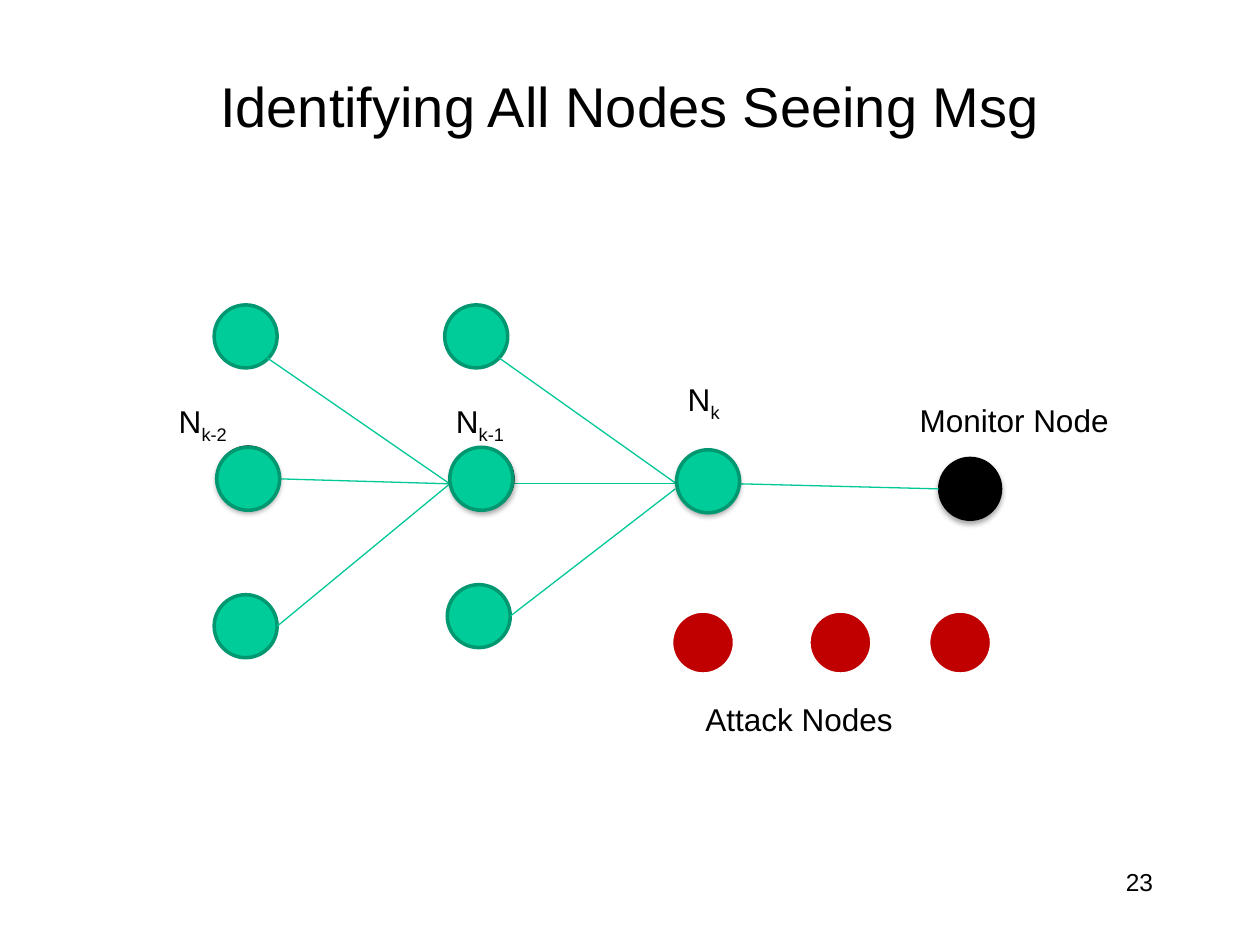
from dataclasses import dataclass

import pptx
import pptx.dml.color
import pptx.enum.shapes
import pptx.enum.text
import pptx.oxml
import pptx.oxml.ns
import pptx.util
from pptx.util import Inches

FONT = "Arial"
BLACK = "000000"
NODE_SIZE = 0.5
LINK_COLOR = "00C896"


@dataclass(frozen=True)
class NodeStyle:
    fill: str
    line: str
    width: float
    shadow: bool = False


@dataclass(frozen=True)
class Node:
    left: float
    top: float
    style: NodeStyle


@dataclass(frozen=True)
class Link:
    start: tuple[float, float]
    end: tuple[float, float]


@dataclass(frozen=True)
class Label:
    text: str
    left: float
    top: float
    width: float
    height: float = 0.4
    subscript: str = ""
    size: int = 18
    align: str = "LEFT"
    grow: bool = True


RELAY = NodeStyle("00CC99", "009771", 2)
ATTACK = NodeStyle("C00000", "FFFFFF", 2)
SHADED = NodeStyle(BLACK, BLACK, 0.75, shadow=True)

OUTER_NODES = [
    Node(1.7, 2.42, RELAY),
    Node(1.7, 4.72, RELAY),
    Node(3.53, 2.42, RELAY),
    Node(3.55, 4.64, RELAY),
    Node(7.45, 3.63, SHADED),
    *(Node(left, 4.85, ATTACK) for left in (5.33, 6.42, 7.37)),
]
HUB_BACKS = [
    Node(5.37, 3.57, SHADED),
    Node(3.58, 3.55, SHADED),
    Node(1.72, 3.54, SHADED),
]
HUBS = [
    Node(1.72, 3.55, RELAY),
    Node(3.57, 3.55, RELAY),
    Node(5.37, 3.57, RELAY),
]

PREVIOUS_HUB = (3.57, 3.84)
LAST_HUB = (5.37, 3.84)
LINKS = [
    *(Link(start, PREVIOUS_HUB) for start in ((2.12, 2.84), (2.2, 3.8), (2.2, 4.97))),
    *(Link(start, LAST_HUB) for start in ((3.96, 2.84), (4.07, 3.84))),
    Link((4.05, 4.89), (5.36, 3.88)),
    Link((5.87, 3.84), (7.45, 3.88)),
]

LABELS = [
    Label("Monitor Node", 7.2, 3.13, 1.75, 0.42),
    Label("N", 5.36, 2.97, 0.88, subscript="k"),
    Label("N", 1.32, 3.14, 0.88, subscript="k-2"),
    Label("N", 3.52, 3.14, 0.88, subscript="k-1"),
    Label("Attack Nodes", 5.5, 5.51, 2.1),
    Label("23", 7.17, 6.83, 2.08, 0.5, size=14, align="RIGHT", grow=False),
]


def color(value: str) -> pptx.dml.color.RGBColor:
    return pptx.dml.color.RGBColor.from_string(value)


def format_span(span, size: float) -> None:
    span.font.name = FONT
    span.font.size = pptx.util.Pt(size)
    span.font.color.rgb = color(BLACK)


def add_shadow(shape) -> None:
    blur, distance = pptx.util.Pt(3.1), pptx.util.Pt(1.8)
    effects = shape.element.spPr.find(pptx.oxml.ns.qn("a:effectLst"))
    effects.append(pptx.oxml.parse_xml(
        f'<a:outerShdw {pptx.oxml.ns.nsdecls("a")} blurRad="{blur}" '
        f'dist="{distance}" dir="5400000" rotWithShape="0">'
        f'<a:srgbClr val="{BLACK}"><a:alpha val="35000"/></a:srgbClr>'
        '</a:outerShdw>'
    ))


def add_node(page, node: Node) -> None:
    shape = page.shapes.add_shape(
        pptx.enum.shapes.MSO_SHAPE.OVAL,
        Inches(node.left), Inches(node.top), Inches(NODE_SIZE), Inches(NODE_SIZE),
    )
    shape.shadow.inherit = False
    shape.fill.solid()
    shape.fill.fore_color.rgb = color(node.style.fill)
    shape.line.color.rgb = color(node.style.line)
    shape.line.width = pptx.util.Pt(node.style.width)
    if node.style.shadow:
        add_shadow(shape)


def add_link(page, link: Link) -> None:
    points = [Inches(value) for value in (*link.start, *link.end)]
    connector = page.shapes.add_connector(
        pptx.enum.shapes.MSO_CONNECTOR.STRAIGHT, *points
    )
    connector.line.color.rgb = color(LINK_COLOR)
    connector.line.width = pptx.util.Pt(0.75)
    connector.element.spPr.append(pptx.oxml.parse_xml(
        f'<a:effectLst {pptx.oxml.ns.nsdecls("a")}/>'
    ))


def add_label(page, label: Label) -> None:
    box = page.shapes.add_textbox(
        Inches(label.left), Inches(label.top), Inches(label.width), Inches(label.height)
    )
    frame = box.text_frame
    frame.word_wrap = True
    if label.grow:
        frame.auto_size = pptx.enum.text.MSO_AUTO_SIZE.SHAPE_TO_FIT_TEXT
    para = frame.paragraphs[0]
    para.text = label.text
    para.alignment = pptx.enum.text.PP_ALIGN[label.align]
    if label.subscript:
        span = para.add_run()
        span.text = label.subscript
        span.font._element.set("baseline", "-25000")
    for span in para.runs:
        format_span(span, label.size)


def add_title(page, text: str) -> None:
    title = page.shapes.title
    title.left, title.top = Inches(0.75), Inches(0.42)
    title.width, title.height = Inches(8.5), Inches(0.83)
    title.text_frame.text = text
    title.text_frame.vertical_anchor = pptx.enum.text.MSO_ANCHOR.MIDDLE
    para = title.text_frame.paragraphs[0]
    para.alignment = pptx.enum.text.PP_ALIGN.CENTER
    format_span(para.runs[0], 32)


def main() -> None:
    deck = pptx.Presentation()
    deck.slide_width, deck.slide_height = Inches(10), Inches(7.5)
    page = deck.slides.add_slide(deck.slide_layouts[5])
    add_title(page, "Identifying All Nodes Seeing Msg")
    layers = [
        (add_node, OUTER_NODES),
        (add_link, LINKS),
        (add_node, HUB_BACKS),
        (add_label, LABELS),
        (add_node, HUBS),
    ]
    for draw, items in layers:
        for item in items:
            draw(page, item)
    deck.save("out.pptx")


if __name__ == "__main__":
    main()
